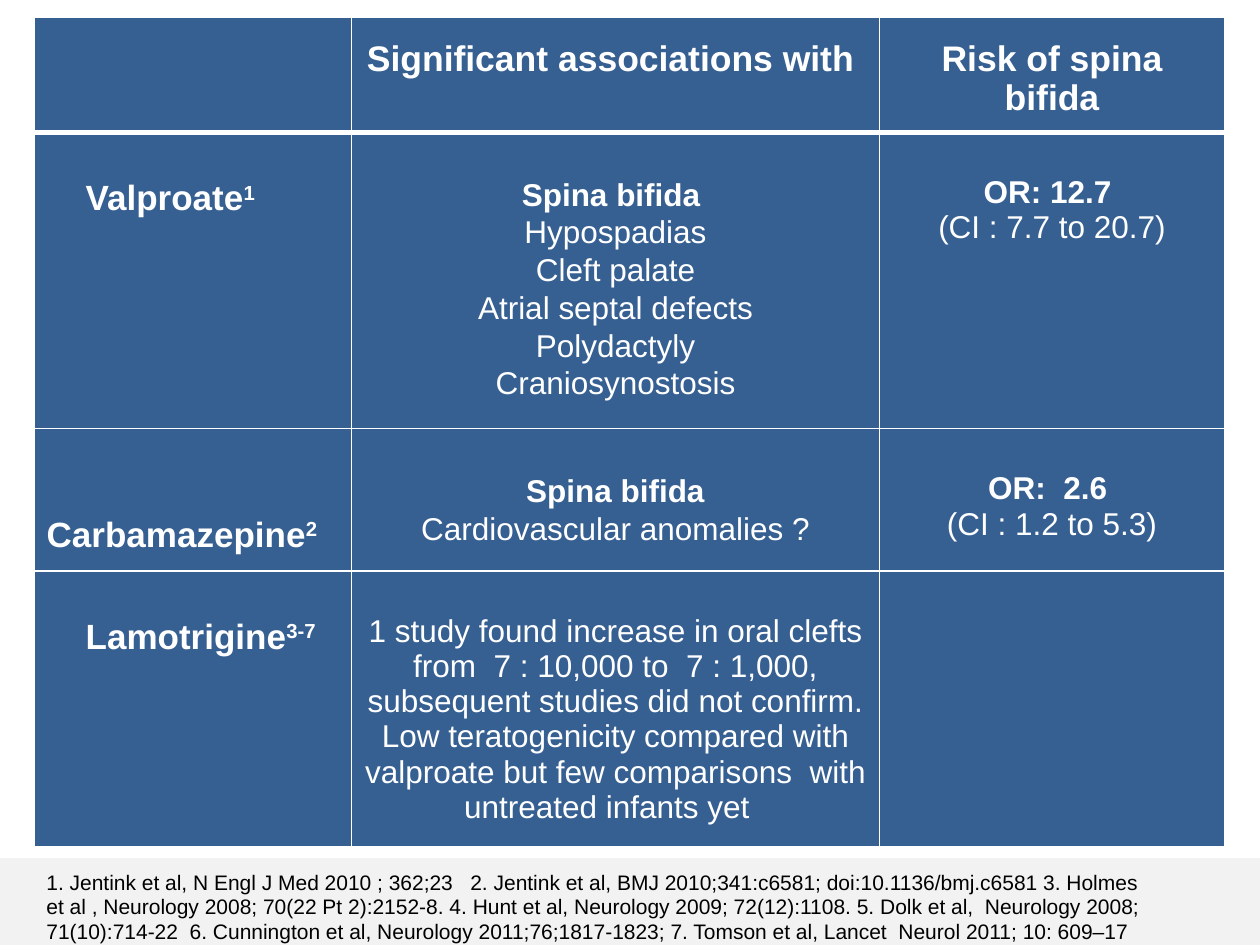
from lxml import etree
from pptx import Presentation
from pptx import util as u
from pptx.dml.color import RGBColor
from pptx.enum import shapes, text
from pptx.oxml.ns import qn

WHITE = RGBColor(255, 255, 255)
BLACK = RGBColor(0, 0, 0)
BLUE = RGBColor(0x37, 0x60, 0x92)
GREY = RGBColor(0xF2, 0xF2, 0xF2)

COLS = [2.52, 4.19, 2.74]
ROWS = [0.91, 2.35, 1.13, 2.19]

HEAD = {"size": u.Pt(20.3), "bold": True}
DRUG = {"size": u.Pt(20), "bold": True}
BOLD = {"size": u.Pt(18), "bold": True}
BODY = {"size": u.Pt(18), "bold": False}
NOTE = {"size": u.Pt(12)}

REFS = [
    "1. Jentink et al, N Engl J Med 2010 ; 362;23   2. Jentink et al, BMJ 2010;341:c6581; "
    "doi:10.1136/bmj.c6581 3. Holmes",
    "et al , Neurology 2008; 70(22 Pt 2):2152-8. 4. Hunt et al, Neurology 2009; "
    "72(12):1108. 5. Dolk et al,  Neurology 2008;",
    "71(10):714-22  6. Cunnington et al, Neurology 2011;76;1817-1823; 7. Tomson et al, "
    "Lancet  Neurol 2011; 10: 609–17",
]
STUDY = ("1 study found increase in oral clefts from  7 : 10,000 to  7 : 1,000, subsequent "
         "studies did not confirm. Low teratogenicity compared with valproate but few "
         "comparisons  with untreated infants yet  ")


def add_run(para, words, style, color, base=None):
    run = para.add_run()
    run.text = words
    run.font.name = "Arial"
    run.font.color.rgb = color
    for key, val in style.items():
        setattr(run.font, key, val)
    if base:
        run._r.get_or_add_rPr().set("baseline", str(base))


def add_paras(frame, lines, color, **form):
    """Write (words, style) lines, each paragraph with the same format."""
    for i, (words, style) in enumerate(lines):
        para = frame.paragraphs[0] if i == 0 else frame.add_paragraph()
        for key, val in form.items():
            if i or key != "space_before":
                setattr(para, key, val)
        add_run(para, words, style, color)


def set_edges(cell, low):
    """Draw white cell borders; low is the width of the bottom one."""
    props = cell._tc.get_or_add_tcPr()
    for i, (side, width) in enumerate([("L", 1), ("R", 1), ("T", 1), ("B", low)]):
        line = etree.Element(qn("a:ln" + side), w=str(u.Pt(width)))
        fill = etree.SubElement(line, qn("a:solidFill"))
        etree.SubElement(fill, qn("a:srgbClr"), val=str(WHITE))
        props.insert(i, line)


def add_grid(slide):
    frame = slide.shapes.add_table(
        len(ROWS), len(COLS), u.Inches(0.27), u.Inches(0.14),
        u.Inches(sum(COLS)), u.Inches(sum(ROWS)))
    grid = frame.table
    for col, width in zip(grid.columns, COLS):
        col.width = u.Inches(width)
    for row, height in zip(grid.rows, ROWS):
        row.height = u.Inches(height)
    for r in range(len(ROWS)):
        for c in range(len(COLS)):
            cell = grid.cell(r, c)
            cell.fill.solid()
            cell.fill.fore_color.rgb = BLUE
            set_edges(cell, 1 if r else 3)
    return grid


def fill_cell(cell, top, lines, after=0):
    cell.margin_top = u.Inches(top)
    add_paras(cell.text_frame, lines, WHITE,
              alignment=text.PP_ALIGN.CENTER, space_after=u.Pt(after))


def name_drug(cell, name, refs, left=0.41, top=0.37):
    cell.margin_left = u.Inches(left)
    cell.margin_top = u.Inches(top)
    para = cell.text_frame.paragraphs[0]
    add_run(para, name, DRUG, WHITE)
    add_run(para, refs, DRUG, WHITE, 30000)


def add_band(slide):
    band = slide.shapes.add_shape(shapes.MSO_SHAPE.RECTANGLE, 0, u.Inches(6.81),
                                  u.Inches(10), u.Inches(0.69))
    band.shadow.inherit = False
    band.fill.solid()
    band.fill.fore_color.rgb = GREY
    band.line.fill.background()


def add_refs(slide):
    box = slide.shapes.add_textbox(u.Inches(0.27), u.Inches(6.89),
                                   u.Inches(9.6), u.Inches(0.61))
    box.text_frame.word_wrap = True
    add_paras(box.text_frame, [(ref, NOTE) for ref in REFS], BLACK,
              line_spacing=0.8, space_before=u.Pt(2.4))


def main():
    deck = Presentation()
    deck.slide_width, deck.slide_height = u.Inches(10), u.Inches(7.5)
    slide = deck.slides.add_slide(deck.slide_layouts[6])
    add_band(slide)
    grid = add_grid(slide)

    for c, title in enumerate(["Significant associations with ", "Risk of spina bifida"], 1):
        fill_cell(grid.cell(0, c), 0.17, [(title, HEAD)])

    name_drug(grid.cell(1, 0), "Valproate", "1")
    name_drug(grid.cell(2, 0), "Carbamazepine", "2", left=0.1, top=0.69)
    name_drug(grid.cell(3, 0), "Lamotrigine", "3-7")

    defects = [
        ("Spina bifida ", ["Hypospadias", "Cleft palate", "Atrial septal defects",
                           "Polydactyly", "Craniosynostosis"]),
        ("Spina bifida", ["Cardiovascular anomalies ?"]),
    ]
    risks = [("OR: 12.7 ", "(CI : 7.7 to 20.7)"), ("OR:  2.6 ", "(CI : 1.2 to 5.3)")]
    for r, ((main_one, rest), (odds, span)) in enumerate(zip(defects, risks), 1):
        lines = [(main_one, BOLD)] + [(item, BODY) for item in rest]
        fill_cell(grid.cell(r, 1), 0.36, lines, after=1.4)
        fill_cell(grid.cell(r, 2), 0.34, [(odds, BOLD), (span, BODY)])
    fill_cell(grid.cell(3, 1), 0.34, [(STUDY, BODY)])

    add_refs(slide)
    deck.save("out.pptx")


if __name__ == "__main__":
    main()
